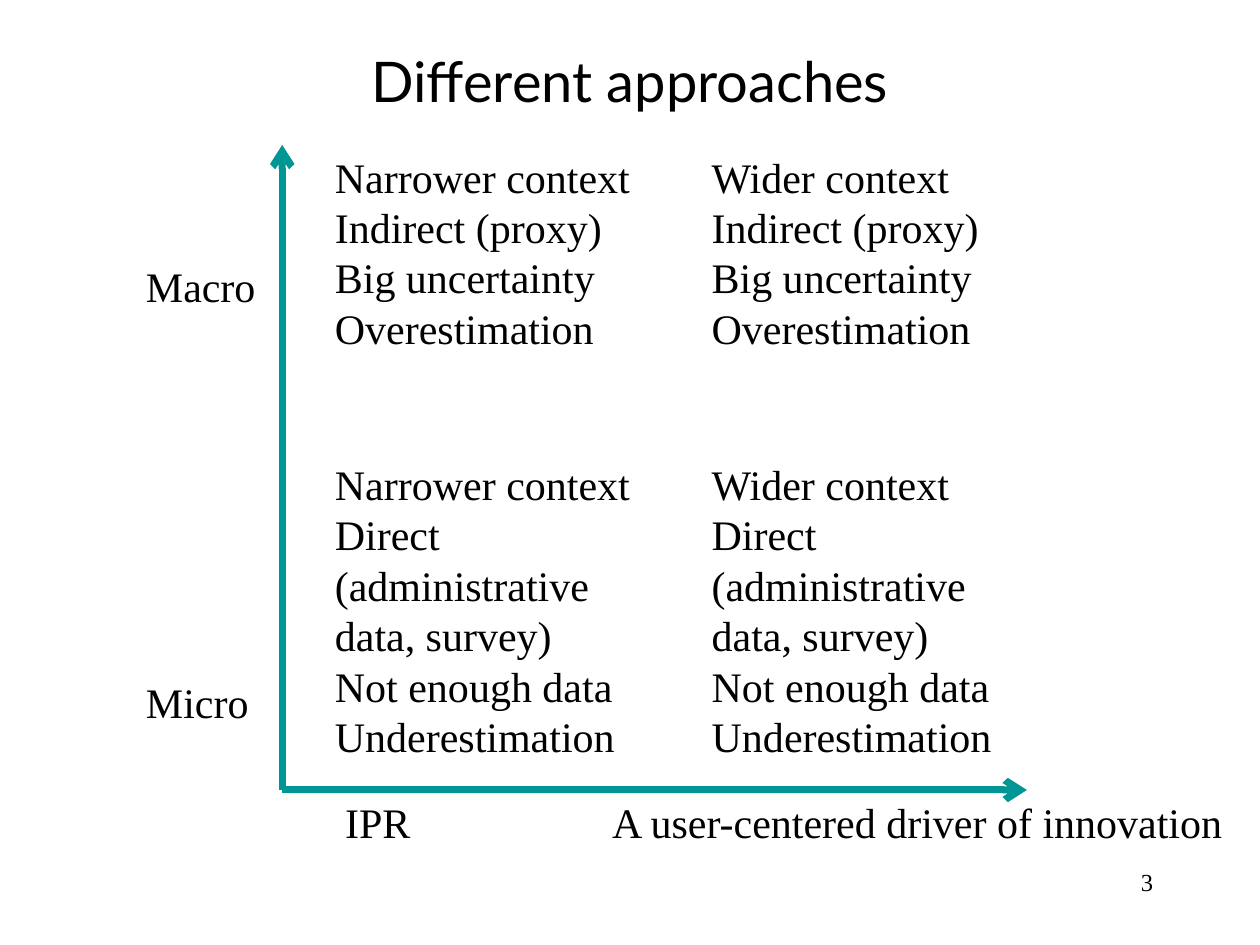
from pptx import Presentation
from pptx.dml.color import RGBColor
from pptx.enum import shapes, text
from pptx.oxml.ns import qn
from pptx.util import Inches, Pt
from lxml import etree

COLORS = {"text": "000000", "axis": "009696"}
SERIF, SANS = "Times New Roman", "Lato"


def write(tf, content, size=24, font=SERIF, color="text",
          align=text.PP_ALIGN.LEFT, anchor=text.MSO_ANCHOR.TOP):
    """Fill a text frame, one paragraph for each line of content."""
    tf.word_wrap = True
    tf.vertical_anchor = anchor
    for i, line in enumerate(content.split("\n")):
        p = tf.paragraphs[0] if i == 0 else tf.add_paragraph()
        p.alignment = align
        r = p.add_run()
        r.text = line
        r.font.size = Pt(size)
        r.font.name = font
        r.font.color.rgb = RGBColor.from_string(COLORS[color])


class SlideBuilder:
    def __init__(self, prs):
        self.s = prs.slides.add_slide(prs.slide_layouts[5])

    def title(self, content, left, top, width, height):
        sp = self.s.shapes.title
        sp.left, sp.top = Inches(left), Inches(top)
        sp.width, sp.height = Inches(width), Inches(height)
        write(sp.text_frame, content, size=32, font=SANS,
              align=text.PP_ALIGN.CENTER, anchor=text.MSO_ANCHOR.MIDDLE)

    def label(self, content, left, top, width, height=0.5, **style):
        sp = self.s.shapes.add_textbox(
            Inches(left), Inches(top), Inches(width), Inches(height))
        write(sp.text_frame, content, **style)

    def arrow(self, x1, y1, x2, y2, color="axis", width=4):
        sp = self.s.shapes.add_connector(
            shapes.MSO_CONNECTOR.STRAIGHT,
            Inches(x1), Inches(y1), Inches(x2), Inches(y2))
        sp.line.color.rgb = RGBColor.from_string(COLORS[color])
        sp.line.width = Pt(width)
        etree.SubElement(sp.line._get_or_add_ln(), qn("a:tailEnd"), type="arrow")
        etree.SubElement(sp._element.spPr, qn("a:effectLst"))


def main():
    prs = Presentation()
    prs.slide_width, prs.slide_height = Inches(10), Inches(7.5)
    slide = SlideBuilder(prs)
    slide.title("Different approaches", 0.75, 0.36, 8.5, 0.56)

    # Axes
    origin_x, origin_y, top_y = 2.24, 6.27, 1.15
    slide.arrow(origin_x, origin_y, 8.15, origin_y)
    slide.arrow(origin_x, origin_y, origin_x, top_y)

    # Axis labels
    slide.label("IPR", 2.64, origin_y, 0.79)
    slide.label("A user-centered driver of innovation", 4.76, origin_y, 5.24)
    for name, top in (("Macro", 2.02), ("Micro", 5.32)):
        slide.label(name, 1.06, top, 1.18)

    # Quadrants: context by column, method by row
    columns = (("Narrower context", 2.56, 2.64), ("Wider context", 5.55, 2.44))
    rows = (
        ("Indirect (proxy)\nBig uncertainty\nOverestimation", top_y, 1.72),
        ("Direct (administrative data, survey)\nNot enough data\nUnderestimation",
         3.59, 2.52),
    )
    for method, top, height in rows:
        for context, left, width in columns:
            slide.label(f"{context}\n{method}", left, top, width, height)

    # Page number
    slide.label("3", 7.17, 6.83, 2.08, size=14, align=text.PP_ALIGN.RIGHT)

    prs.save("out.pptx")


if __name__ == "__main__":
    main()
